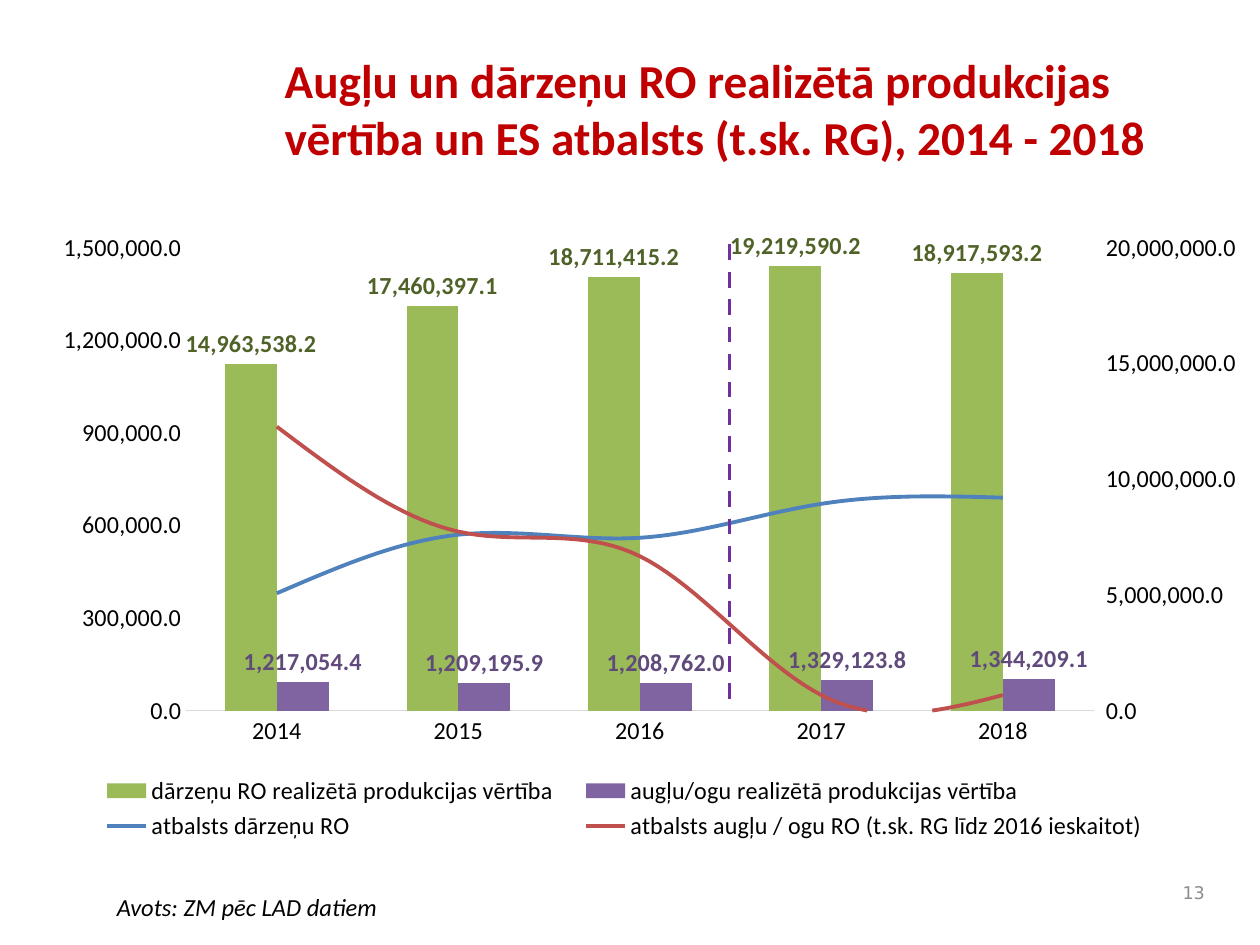
from copy import deepcopy
from dataclasses import dataclass

from lxml.etree import SubElement
from pptx import Presentation
from pptx.chart.axis import CategoryAxis, ValueAxis
from pptx.chart.chart import Chart
from pptx.chart.data import CategoryChartData
from pptx.dml.color import RGBColor
from pptx.enum.chart import (XL_CHART_TYPE, XL_LABEL_POSITION, XL_LEGEND_POSITION,
                             XL_MARKER_STYLE, XL_TICK_LABEL_POSITION, XL_TICK_MARK)
from pptx.enum.dml import MSO_LINE
from pptx.enum.shapes import MSO_CONNECTOR
from pptx.enum.text import MSO_ANCHOR, MSO_AUTO_SIZE, PP_ALIGN
from pptx.oxml import parse_xml
from pptx.oxml.ns import nsdecls, qn
from pptx.slide import Slide
from pptx.util import Inches, Pt


@dataclass(frozen=True)
class Theme:
    font: str = "Calibri"
    number_font: str = "DejaVu Sans"
    title_size: float = 27
    body_size: float = 14
    number_size: float = 10
    line_width: float = 2.25
    grid_width: float = 0.75
    text: str = "000000"
    title: str = "C00000"
    muted: str = "8C8C8C"
    grid: str = "D9D9D9"
    divider: str = "7030A0"


@dataclass(frozen=True)
class Measure:
    name: str
    values: tuple[float, ...]
    color: str
    label_color: str = ""


THEME = Theme()
NUMBER_FORMAT = "#,##0.0"
YEARS = [str(year) for year in range(2014, 2019)]
SALES = (
    Measure("dārzeņu RO realizētā produkcijas vērtība",
            (14963538.2, 17460397.1, 18711415.2, 19219590.2, 18917593.2), "9BBB59", "4F6228"),
    Measure("augļu/ogu realizētā produkcijas vērtība",
            (1217054.4, 1209195.9, 1208762, 1329123.8, 1344209.1), "8064A2", "604A7B"),
)
SUPPORT = (
    Measure("atbalsts dārzeņu RO", (380000, 570000, 560000, 670000, 690000), "4F81BD"),
    Measure("atbalsts augļu / ogu RO (t.sk. RG līdz 2016 ieskaitot)",
            (920000, 580000, 500000, 50000, 50000), "C0504D"),
)


def style_font(font, size: float, color: str, name: str = THEME.font,
               bold: bool = False, italic: bool = False) -> None:
    """Apply size, colour, typeface and emphasis."""
    font.size, font.name, font.bold, font.italic = Pt(size), name, bold, italic
    font.color.rgb = RGBColor.from_string(color)


def style_line(line, color: str, width: float) -> None:
    """Give a line its colour and width."""
    line.color.rgb = RGBColor.from_string(color)
    line.width = Pt(width)


def style_value_axis(axis: ValueAxis, maximum: float, step: float, tick: XL_TICK_MARK) -> None:
    """Set the scale and look of a value axis."""
    axis.minimum_scale, axis.maximum_scale, axis.major_unit = 0, maximum, step
    axis.major_tick_mark, axis.minor_tick_mark = tick, XL_TICK_MARK.NONE
    axis.tick_labels.number_format = NUMBER_FORMAT
    axis.tick_labels.number_format_is_linked = False
    style_font(axis.tick_labels.font, THEME.body_size, THEME.text)
    axis.format.line.fill.background()


def move_support_to_lines(chart: Chart) -> tuple[CategoryAxis, ValueAxis]:
    """Turn the support series into lines on axes of their own."""
    bars = chart.plots[0]
    bar_element = bars.series[0]._element.getparent()
    plot_area = bar_element.getparent()
    lines = parse_xml(f'<c:lineChart {nsdecls("c")}><c:grouping val="standard"/>'
                      '<c:varyColors val="0"/></c:lineChart>')
    for series in list(bars.series)[len(SALES):]:
        element = series._element
        for flag in element.findall(qn("c:invertIfNegative")):
            element.remove(flag)
        lines.append(element)
    SubElement(lines, qn("c:marker")).set("val", "1")
    bar_element.addnext(lines)

    category_id, value_id = "50010", "50020"
    copies = []
    for tag, own_id, cross_id in (("c:catAx", category_id, value_id),
                                  ("c:valAx", value_id, category_id)):
        SubElement(lines, qn("c:axId")).set("val", own_id)
        axis = deepcopy(plot_area.find(qn(tag)))
        axis.find(qn("c:axId")).set("val", own_id)
        axis.find(qn("c:crossAx")).set("val", cross_id)
        copies.append(axis)
    sales_axis = plot_area.find(qn("c:valAx"))
    sales_axis.addnext(copies[1])
    copies[1].addnext(copies[0])
    sales_axis.find(qn("c:axPos")).set("val", "r")
    sales_axis.find(qn("c:crosses")).set("val", "max")
    return CategoryAxis(copies[0]), ValueAxis(copies[1])


def place_part(part, index: int, target: str, box: tuple[float, ...]) -> None:
    """Fix a chart part at a box given in fractions of the chart."""
    for layout in part.findall(qn("c:layout")):
        part.remove(layout)
    settings = (("xMode", "edge"), ("yMode", "edge"), *zip("xywh", box))
    content = target + "".join(f'<c:{tag} val="{value}"/>' for tag, value in settings)
    part.insert(index, parse_xml(f'<c:layout {nsdecls("c")}><c:manualLayout>{content}'
                                 '</c:manualLayout></c:layout>'))


def add_sales_chart(slide: Slide) -> None:
    """Add sales columns with support lines."""
    data = CategoryChartData(number_format=NUMBER_FORMAT)
    data.categories = YEARS
    for measure in SALES + SUPPORT:
        data.add_series(measure.name, measure.values)
    chart = slide.shapes.add_chart(XL_CHART_TYPE.COLUMN_CLUSTERED, Inches(0.28), Inches(1.78),
                                   Inches(9.53), Inches(5.04), data).chart
    chart.has_title = False
    style_font(chart.font, THEME.body_size, THEME.text)
    chart.has_legend = True
    legend = chart.legend
    legend.position, legend.include_in_layout = XL_LEGEND_POSITION.BOTTOM, False
    style_font(legend.font, THEME.body_size, THEME.text)
    place_part(legend._element, 1, "", (0.04, 0.86, 0.92, 0.12))

    sales_axis, hidden_axis = chart.value_axis, chart.category_axis
    year_axis, support_axis = move_support_to_lines(chart)
    place_part(sales_axis._element.getparent(), 0, '<c:layoutTarget val="inner"/>',
               (0.128, 0.037, 0.77, 0.729))
    hidden_axis.visible = False
    sales_axis.has_major_gridlines = False
    style_value_axis(sales_axis, 20000000, 5000000, XL_TICK_MARK.OUTSIDE)
    style_value_axis(support_axis, 1500000, 300000, XL_TICK_MARK.NONE)
    support_axis.has_major_gridlines = True
    style_line(support_axis.major_gridlines.format.line, THEME.grid, THEME.grid_width)
    year_axis.major_tick_mark = XL_TICK_MARK.NONE
    year_axis.tick_label_position = XL_TICK_LABEL_POSITION.NEXT_TO_AXIS
    style_font(year_axis.tick_labels.font, THEME.body_size, THEME.text)
    style_line(year_axis.format.line, THEME.grid, THEME.grid_width)

    columns, lines = chart.plots
    columns.gap_width, columns.overlap, columns.vary_by_categories = 150, 0, False
    for series, measure in zip(columns.series, SALES):
        series.format.fill.solid()
        series.format.fill.fore_color.rgb = RGBColor.from_string(measure.color)
        labels = series.data_labels
        labels.show_value = True
        labels.number_format, labels.number_format_is_linked = NUMBER_FORMAT, False
        labels.position = XL_LABEL_POSITION.OUTSIDE_END
        style_font(labels.font, THEME.body_size, measure.label_color, bold=True)
    for series, measure in zip(lines.series, SUPPORT):
        series.smooth = True
        series.marker.style = XL_MARKER_STYLE.NONE
        style_line(series.format.line, measure.color, THEME.line_width)


def add_title(slide: Slide) -> None:
    """Place and fill the title."""
    title = slide.shapes.title
    title.left, title.top, title.width, title.height = map(Inches, (2.16, 0.36, 7.34, 1.18))
    frame = title.text_frame
    frame.vertical_anchor, frame.auto_size = MSO_ANCHOR.TOP, MSO_AUTO_SIZE.NONE
    paragraph = frame.paragraphs[0]
    paragraph.alignment = PP_ALIGN.LEFT
    run = paragraph.add_run()
    run.text = "Augļu un dārzeņu RO realizētā produkcijas vērtība un ES atbalsts (t.sk. RG), 2014 - 2018"
    style_font(run.font, THEME.title_size, THEME.title, bold=True)


def add_text(slide: Slide, box: tuple[float, ...], text: str, alignment: PP_ALIGN,
             anchor: MSO_ANCHOR, **font_style) -> None:
    """Add a one-line text box."""
    frame = slide.shapes.add_textbox(*map(Inches, box)).text_frame
    frame.word_wrap, frame.vertical_anchor = False, anchor
    paragraph = frame.paragraphs[0]
    paragraph.alignment = alignment
    run = paragraph.add_run()
    run.text = text
    style_font(run.font, **font_style)


def add_divider(slide: Slide) -> None:
    """Add the dashed line between 2016 and 2017."""
    divider = slide.shapes.add_connector(MSO_CONNECTOR.STRAIGHT, Inches(5.79), Inches(1.94),
                                         Inches(5.79), Inches(5.64))
    style_line(divider.line, THEME.divider, THEME.line_width)
    divider.line.dash_style = MSO_LINE.DASH
    SubElement(divider._element.spPr, qn("a:effectLst"))


def main() -> None:
    """Build and save the presentation."""
    presentation = Presentation()
    presentation.slide_width, presentation.slide_height = Inches(10), Inches(7.5)
    slide = presentation.slides.add_slide(presentation.slide_layouts[5])
    add_text(slide, (9.17, 6.92, 0.49, 0.33), "13", PP_ALIGN.RIGHT, MSO_ANCHOR.MIDDLE,
             size=THEME.number_size, color=THEME.muted, name=THEME.number_font)
    add_sales_chart(slide)
    add_title(slide)
    add_text(slide, (0.83, 7.03, 2.29, 0.34), "Avots: ZM pēc LAD datiem", PP_ALIGN.LEFT,
             MSO_ANCHOR.TOP, size=THEME.body_size, color=THEME.text, italic=True)
    add_divider(slide)
    presentation.save("out.pptx")


if __name__ == "__main__":
    main()
